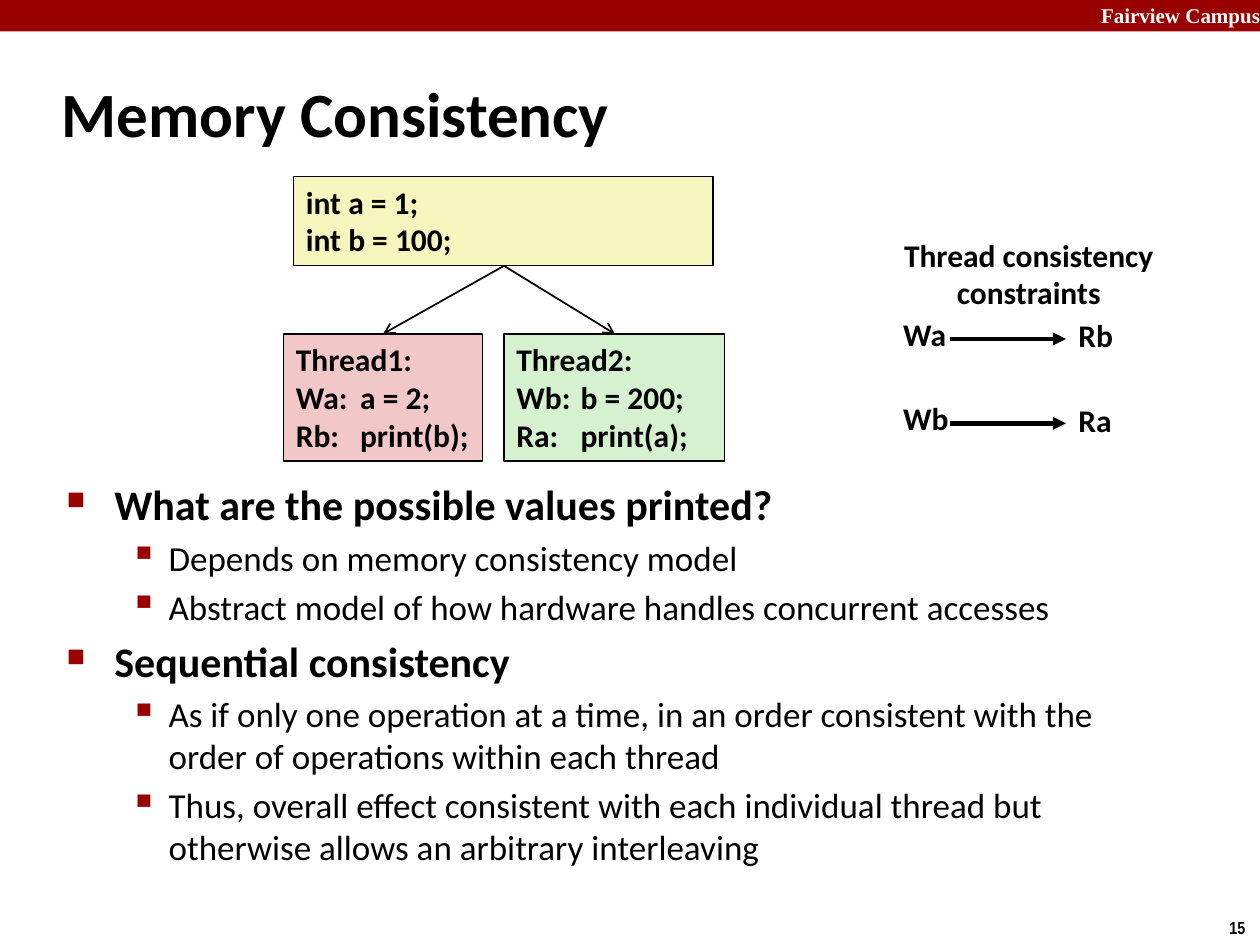
from lxml import etree
from pptx import Presentation
from pptx.dml.color import RGBColor
from pptx.enum.shapes import MSO_CONNECTOR as CONNECTOR, MSO_SHAPE as SHAPE
from pptx.enum.text import MSO_ANCHOR as ANCHOR, MSO_AUTO_SIZE as AUTO_SIZE, PP_ALIGN as ALIGN
from pptx.oxml.ns import qn
from pptx.util import Inches, Pt

BLACK = RGBColor(0x00, 0x00, 0x00)
WHITE = RGBColor(0xFF, 0xFF, 0xFF)
DARK_RED = RGBColor(0x99, 0x00, 0x00)
YELLOW = RGBColor(0xF6, 0xF5, 0xBD)
PINK = RGBColor(0xF1, 0xC7, 0xC7)
GREEN = RGBColor(0xD5, 0xF1, 0xCF)


def write_text(shape, text, size, font="Calibri", color=BLACK, align=ALIGN.LEFT, wrap=True):
    """Fill a shape with bold text, one paragraph a line."""
    frame = shape.text_frame
    frame.text = text
    frame.word_wrap = wrap
    frame.auto_size = AUTO_SIZE.NONE
    for paragraph in frame.paragraphs:
        paragraph.alignment = align
        for run in paragraph.runs:
            run.font.name = font
            run.font.size = Pt(size)
            run.font.bold = True
            run.font.color.rgb = color


def add_arrow(x1, y1, x2, y2, width, head):
    """Draw a black line with an arrowhead at its end."""
    arrow = slide.shapes.add_connector(
        CONNECTOR.STRAIGHT, Inches(x1), Inches(y1), Inches(x2), Inches(y2))
    arrow.line.color.rgb = BLACK
    arrow.line.width = Pt(width)
    etree.SubElement(arrow.line._get_or_add_ln(), qn("a:tailEnd"), type=head)
    etree.SubElement(arrow._element.spPr, qn("a:effectLst"))


presentation = Presentation()
presentation.slide_width = Inches(10)
presentation.slide_height = Inches(7.5)
slide = presentation.slides.add_slide(presentation.slide_layouts[5])

# Header band
band = slide.shapes.add_shape(SHAPE.RECTANGLE, 0, 0, Inches(10), Inches(0.25))
band.shadow.inherit = False
band.fill.solid()
band.fill.fore_color.rgb = DARK_RED
band.line.fill.background()

# School name and page number
school = slide.shapes.add_textbox(Inches(8.64), Inches(-0.03), Inches(1.43), Inches(0.3))
write_text(school, "Fairview Campus", 12, "Times New Roman", WHITE, wrap=False)
page = slide.shapes.add_textbox(Inches(9.66), Inches(7.23), Inches(0.34), Inches(0.27))
write_text(page, "15", 10, "Arial Narrow", wrap=False)

# Title
title = slide.shapes.title
title.left, title.top = Inches(0.39), Inches(0.48)
title.width, title.height = Inches(8.3), Inches(0.83)
write_text(title, "Memory Consistency", 36)
title.text_frame.vertical_anchor = ANCHOR.MIDDLE

# Bulleted text: level, text
bullets = [
    (0, "What are the possible values printed?"),
    (1, "Depends on memory consistency model"),
    (1, "Abstract model of how hardware handles concurrent accesses"),
    (0, "Sequential consistency"),
    (1, "As if only one operation at a time, in an order consistent with the "
        "order of operations within each thread"),
    (1, "Thus, overall effect consistent with each individual thread but "
        "otherwise allows an arbitrary interleaving"),
]
# Size, bold, left margin, hanging indent, bullet, bullet size in 1/1000 %
levels = [(24, True, 0.38, 0.38, "■", 60000), (20, False, 0.81, 0.31, "▪", 110000)]
body = slide.shapes.add_textbox(Inches(0.43), Inches(3.75), Inches(8.64), Inches(3.18))
write_text(body, "\n".join(text for level, text in bullets), 24)
for paragraph, (level, text) in zip(body.text_frame.paragraphs, bullets):
    size, bold, margin, hanging, bullet, bullet_size = levels[level]
    paragraph.level = level
    paragraph.space_before = Pt(size * 0.2)
    paragraph.runs[0].font.size = Pt(size)
    paragraph.runs[0].font.bold = bold
    properties = paragraph._p.get_or_add_pPr()
    properties.set("marL", str(Inches(margin)))
    properties.set("indent", str(-Inches(hanging)))
    bullet_color = etree.SubElement(properties, qn("a:buClr"))
    etree.SubElement(bullet_color, qn("a:srgbClr"), val=str(DARK_RED))
    etree.SubElement(properties, qn("a:buSzPct"), val=str(bullet_size))
    etree.SubElement(properties, qn("a:buChar"), char=bullet)

# Code boxes
code_boxes = [
    (2.33, 1.4, 3.33, 0.71, YELLOW, "int a = 1;\nint b = 100;"),
    (2.25, 2.65, 1.58, 1.01, PINK, "Thread1:\nWa:\ta = 2;\nRb: \tprint(b);"),
    (4, 2.65, 1.75, 1.01, GREEN, "Thread2:\nWb:\tb = 200;\nRa:\tprint(a);"),
]
for left, top, width, height, color, code in code_boxes:
    box = slide.shapes.add_shape(
        SHAPE.RECTANGLE, Inches(left), Inches(top), Inches(width), Inches(height))
    box.shadow.inherit = False
    box.fill.solid()
    box.fill.fore_color.rgb = color
    box.line.color.rgb = BLACK
    box.line.width = Pt(0.75)
    write_text(box, code, 18)
    box.text_frame.vertical_anchor = ANCHOR.TOP
    for paragraph in box.text_frame.paragraphs:
        tabs = etree.SubElement(paragraph._p.get_or_add_pPr(), qn("a:tabLst"))
        etree.SubElement(tabs, qn("a:tab"), pos=str(Inches(0.51)), algn="l")

# Arrows from the shared variables to the threads
for thread_x in (3.04, 4.88):
    add_arrow(4, 2.11, thread_x, 2.65, 1, "arrow")

# Thread consistency constraints
heading = slide.shapes.add_textbox(Inches(7.07), Inches(1.82), Inches(2.19), Inches(0.71))
write_text(heading, "Thread consistency\nconstraints", 18, align=ALIGN.CENTER, wrap=False)
for top, write, read in ((2.45, "Wa", "Rb"), (3.12, "Wb", "Ra")):
    for left, label_top, width, label in ((7.07, top, 0.56, write), (8.46, top + 0.01, 0.48, read)):
        operation = slide.shapes.add_textbox(
            Inches(left), Inches(label_top), Inches(width), Inches(0.4))
        write_text(operation, label, 18, wrap=False)
    add_arrow(7.54, top + 0.24, 8.46, top + 0.24, 2.5, "triangle")

presentation.save("out.pptx")
